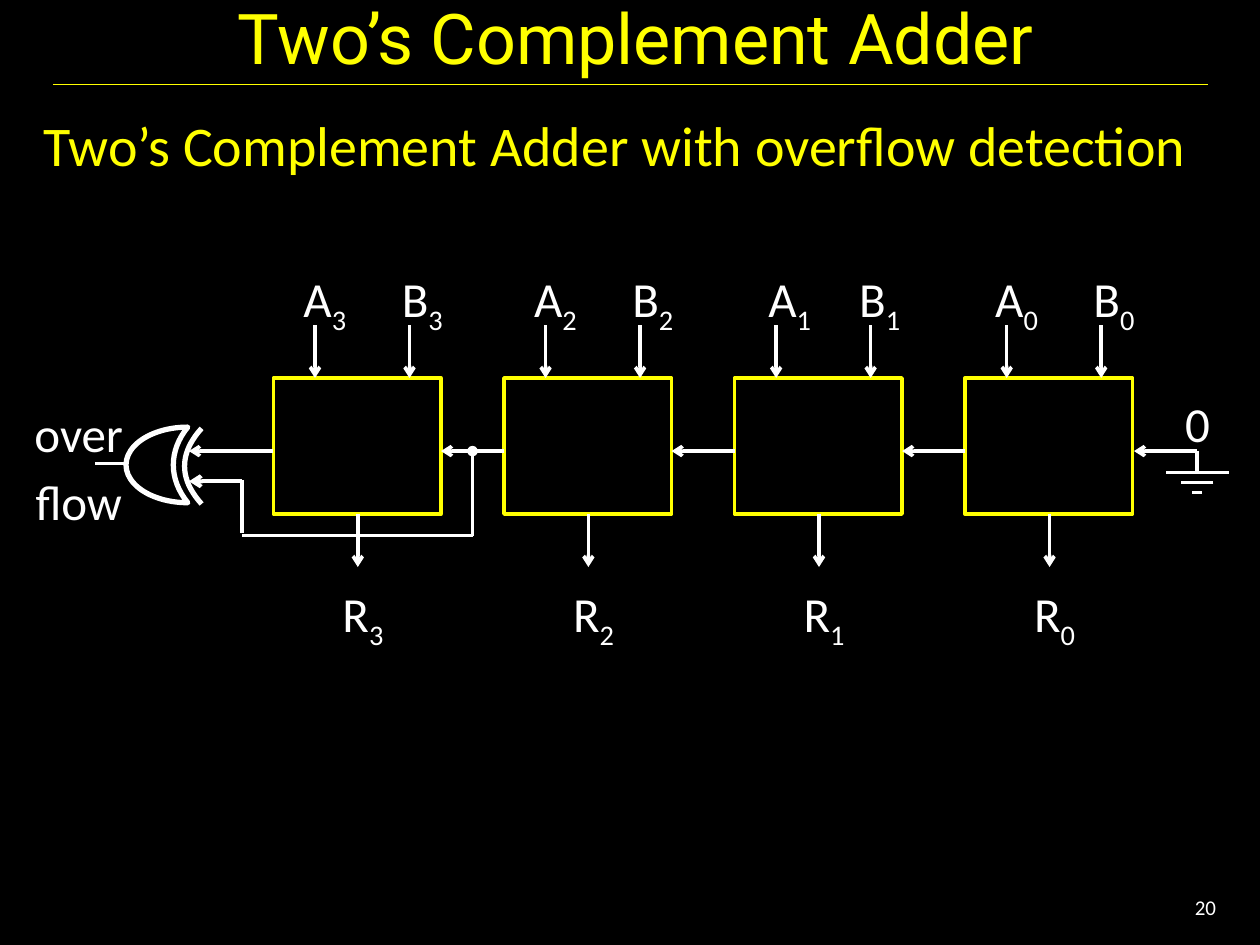
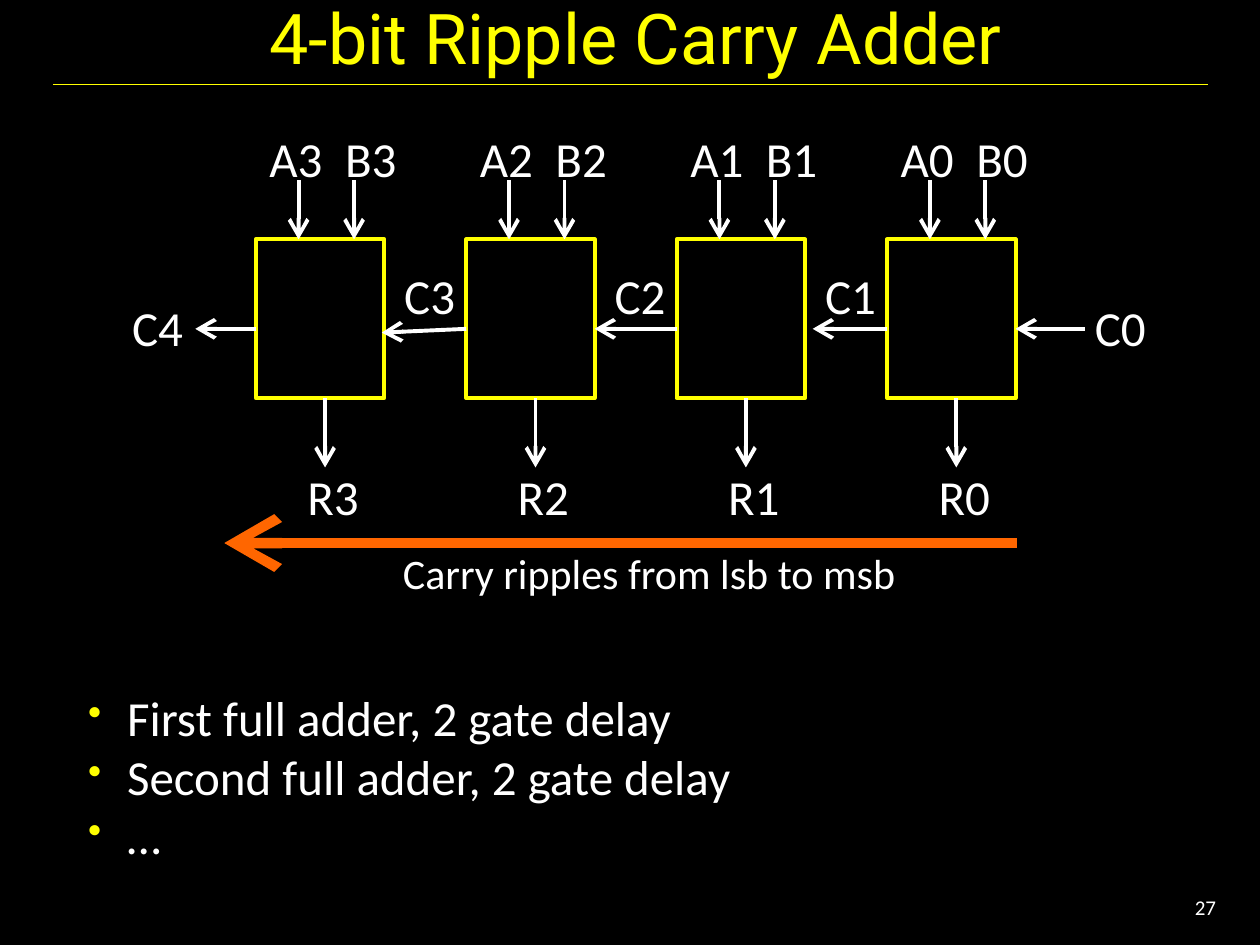
"""Build two slides on four-bit adders."""
from lxml.etree import SubElement as Sub
from pptx import Presentation
from pptx.dml.color import RGBColor as Rgb
from pptx.enum.shapes import MSO_CONNECTOR as Conn, MSO_SHAPE as Kind
from pptx.enum.text import MSO_ANCHOR as Anchor, PP_ALIGN as Align
from pptx.oxml.ns import qn
from pptx.util import Cm, Pt

HUES = {"back": "000000", "main": "FFFF00", "text": "FFFFFF", "ripple": "FF6600"}
CENTER = {"alignment": Align.CENTER, "line_spacing": 1.16}
LOOSE = {"line_spacing": 1.16}


def inch(n):
    return Cm(2.54 * n)


def hue(name):
    return Rgb.from_string(HUES[name])


def apply(item, form):
    for name, value in form.items():
        setattr(item, name, value)


class Deck:
    def __init__(self):
        self.prs = Presentation()
        apply(self.prs, {"slide_width": inch(10), "slide_height": inch(7.5)})

    def new(self, title, page, width, head):
        self.slide = self.prs.slides.add_slide(self.prs.slide_layouts[6])
        self.shapes = self.slide.shapes
        self.width, self.head = width, head
        fill = self.slide.background.fill
        fill.solid()
        fill.fore_color.rgb = hue("back")
        self.line((0.42, 0.67), (9.59, 0.67), color="main", width=0.75)
        self.text((0.42, 0, 9.25, 0.58), [title], size=40, font="Roboto", color="main",
                  form={"alignment": Align.CENTER}, anchor=Anchor.MIDDLE)
        self.text((8.92, 7, 0.83, 0.4), [page], size=12,
                  form={"alignment": Align.RIGHT}, anchor=Anchor.MIDDLE)

    def text(self, at, lines, size=28, font="Calibri", color="text", form={},
             anchor=Anchor.TOP, wrap=True, bullet=False):
        frame = self.shapes.add_textbox(*map(inch, at)).text_frame
        apply(frame, {"word_wrap": wrap, "vertical_anchor": anchor})
        for i, line in enumerate(lines):
            para = frame.add_paragraph() if i else frame.paragraphs[0]
            base, _, sub = line.partition("_")
            para.text = base
            if sub:
                para.add_run().text = sub
                para.runs[-1]._r.get_or_add_rPr().set("baseline", "-25000")
            apply(para, form)
            for run in para.runs:
                apply(run.font, {"name": font, "size": Pt(size)})
                run.font.color.rgb = hue(color)
            if bullet:
                self.bullet(para)

    def bullet(self, para):
        props = para._p.get_or_add_pPr()
        for name, size in {"marL": 0.31, "indent": -0.31}.items():
            props.set(name, str(int(inch(size))))
        Sub(Sub(props, qn("a:buClr")), qn("a:srgbClr"), val=HUES["main"])
        Sub(props, qn("a:buSzPct"), val="80000")
        Sub(props, qn("a:buChar"), char="•")

    def label(self, x, y, text, form={}, width=0.62):
        self.text((x, y, width, 0.57), [text], form=form, wrap=False)

    def line(self, start, end, tail=None, head=None, color="text", width=None):
        link = self.shapes.add_connector(Conn.STRAIGHT, *map(inch, start + end))
        link.line.color.rgb = hue(color)
        link.line.width = Pt(width or self.width)
        props = link._element.spPr
        for tag, kind in (("a:headEnd", head), ("a:tailEnd", tail)):
            if kind:
                Sub(props.get_or_add_ln(), qn(tag), type=kind, w=self.head, len=self.head)
        Sub(props, qn("a:effectLst"))

    def arrow(self, start, end, **form):
        self.line(start, end, tail="arrow", **form)

    def trim(self, shape, color, width):
        shape.shadow.inherit = False
        shape.fill.background()
        shape.line.color.rgb = hue(color)
        shape.line.width = Pt(width)

    def box(self, *at):
        self.trim(self.shapes.add_shape(Kind.RECTANGLE, *map(inch, at)), "main", self.width)

    def gate(self):
        moon = self.shapes.add_shape(Kind.MOON, *map(inch, (1, 3.39, 0.49, 0.6)))
        moon.adjustments[0] = 0.766
        steps = [i / 20 for i in range(21)]
        curve = [(inch(1.6 - 0.54 * t * (1 - t)), inch(3.4 + 0.6 * t)) for t in steps]
        pen = self.shapes.build_freeform(*curve[0])
        pen.add_line_segments(curve[1:], close=False)
        for shape in (moon, pen.convert_to_shape()):
            self.trim(shape, "text", 3)


def signed(deck):
    deck.new("Two’s Complement Adder", "20", 2, "med")
    deck.text((0.25, 0.83, 9.5, 6.25), ["Two’s Complement Adder with overflow detection"],
              size=32, color="main")
    for i in range(4):
        bit, x = 3 - i, 2.17 + 1.83 * i
        inset = 0.03 if bit == 1 else 0
        deck.box(x, 3, 1.33, 1.08)
        deck.label(x + 0.14 + inset, 2, f"A_{bit}", LOOSE, 0.55)
        deck.label(x + 0.92 - inset, 2, f"B_{bit}", LOOSE, 0.55)
        for pin in (x + 0.33, x + 1.08):
            deck.arrow((pin, 2.58), (pin, 3))
        deck.arrow((x + 0.67, 4.08), (x + 0.67, 4.5))
        deck.text((x + 0.25, 4.5, 0.92, 0.61), [f"R_{bit}"], form=CENTER)
        deck.arrow((x, 3.58), (x - (0.5 if i else 0.67), 3.58))
    deck.arrow((9.5, 3.58), (9, 3.58))
    deck.line((9.5, 3.75), (9.5, 3.58))
    for i, half in enumerate((0.25, 0.13, 0.04)):
        y = 3.75 + 0.08 * i
        deck.line((9.5 + half, y), (9.5 - half, y))
    deck.text((9.17, 3, 0.67, 0.65), ["0"], form=CENTER)
    deck.text((0, 3.08, 1.25, 1.18), ["over\vflow"], form=CENTER)
    deck.line((3.75, 3.58), (3.75, 4.25), head="oval")
    deck.line((3.75, 4.25), (1.92, 4.25))
    deck.line((1.92, 3.81), (1.92, 4.23))
    deck.arrow((1.92, 3.82), (1.5, 3.82), width=2.25)
    deck.gate()
    deck.line((1, 3.68), (0.75, 3.68))


def ripple(deck):
    deck.new("4-bit Ripple Carry Adder", "27", 2.25, "lg")
    tips = [(1.55, 2.61), (3.03, 2.64), (4.72, 2.61), (6.45, 2.61)]
    for i, tip in enumerate(tips):
        bit, x = 3 - i, 2.03 + 1.67 * i
        deck.box(x, 1.9, 1.02, 1.26)
        deck.label(x + 0.01, 0.97, f"A{bit}")
        deck.label(x + 0.61, 0.97, f"B{bit}")
        for pin in (x + 0.34, x + 0.78):
            deck.arrow((pin, 1.43), (pin, 1.9))
        deck.arrow((x + 0.55, 3.16), (x + 0.55, 3.71))
        deck.label(x + 0.31, 3.65, f"R{bit}")
        deck.arrow((x, 2.61), tip)
        if i:
            deck.label(x - 0.59, 2.06, f"C{bit + 1}")
    deck.arrow((8.61, 2.61), (8.06, 2.61))
    deck.label(0.95, 2.31, "C4")
    deck.label(8.59, 2.31, "C0")
    deck.arrow((8.07, 4.31), (1.78, 4.31), color="ripple", width=6)
    deck.text((3.1, 4.3, 4.14, 0.5), ["Carry ripples from lsb to msb"], size=24, wrap=False)
    deck.text((0.6, 5.41, 8.28, 1.51),
              ["First full adder, 2 gate delay", "Second full adder, 2 gate delay", "…"],
              bullet=True)


def main():
    deck = Deck()
    signed(deck)
    ripple(deck)
    deck.prs.save("out.pptx")


if __name__ == "__main__":
    main()
